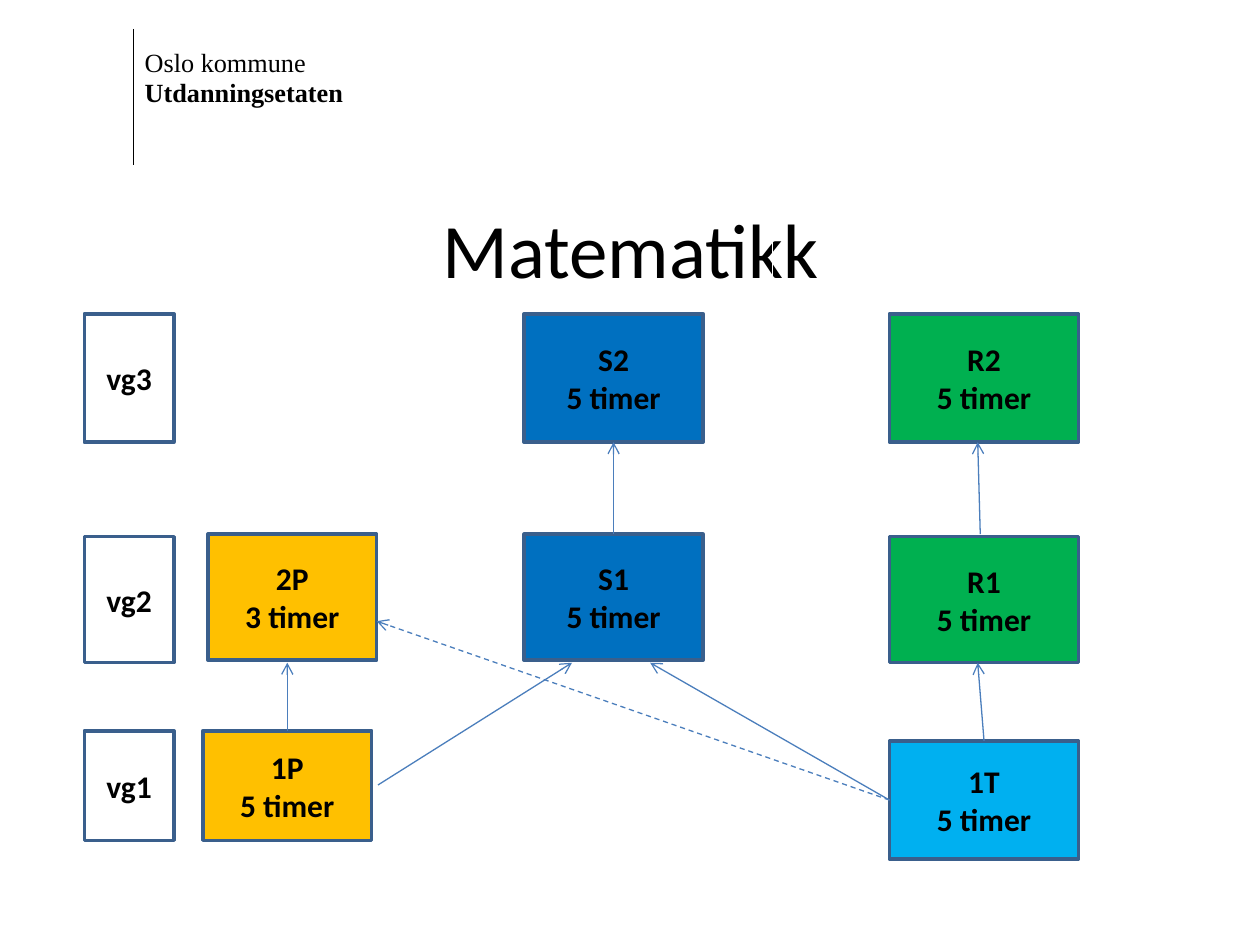
from lxml import etree
from pptx import Presentation
from pptx import util as u
from pptx.dml.color import RGBColor
from pptx.enum import dml, shapes, text
from pptx.oxml.ns import qn

BLACK = RGBColor(0, 0, 0)
EDGE = RGBColor(0x3A, 0x5F, 0x8C)
ARROW = RGBColor(0x4B, 0x7E, 0xBC)
GOLD = RGBColor(0xFF, 0xC0, 0x00)
SKY = RGBColor(0x00, 0xB0, 0xF0)
BLUE = RGBColor(0x00, 0x70, 0xC0)
GREEN = RGBColor(0x00, 0xB0, 0x50)


def style(par, name, size, bold=False):
    par.font.name, par.font.size, par.font.bold = name, u.Pt(size), bold
    par.font.color.rgb = BLACK


def join(start, end, color):
    line = slide.shapes.add_connector(
        shapes.MSO_CONNECTOR.STRAIGHT, *map(u.Inches, start + end))
    line.line.color.rgb, line.line.width = color, u.Pt(0.75)
    etree.SubElement(line._element.spPr, qn("a:effectLst"))
    return line


deck = Presentation()
deck.slide_width, deck.slide_height = u.Inches(10), u.Inches(7.5)
slide = deck.slides.add_slide(deck.slide_layouts[5])

# Title
title = slide.shapes.title
title.left, title.top, title.width, title.height = map(u.Inches, (0.83, 1.55, 8.35, 0.55))
frame = title.text_frame
frame.text = "Matematikk"
frame.auto_size = text.MSO_AUTO_SIZE.NONE
frame.vertical_anchor = text.MSO_ANCHOR.TOP
frame.paragraphs[0].alignment = text.PP_ALIGN.CENTER
style(frame.paragraphs[0], "Calibri", 44)

# Sender
join((1.06, 0.23), (1.06, 1.31), BLACK)
sender = slide.shapes.add_textbox(*map(u.Inches, (1.05, 0.36, 2.02, 0.78)))
frame = sender.text_frame
frame.word_wrap = False
frame.margin_top = u.Inches(0.02)
frame.text = "Oslo kommune\nUtdanningsetaten"
for par, bold in zip(frame.paragraphs, (False, True)):
    props = par._p.get_or_add_pPr()
    props.set("marL", str(u.Inches(0.5)))
    props.set("indent", str(-u.Inches(0.5)))
    par.line_spacing = u.Pt(17)
    style(par, "Times New Roman", 15, bold)

# Empty table with white borders
widths, heights = (0.26, 3, 3), (2.54, 2.87, 2.22)
table = slide.shapes.add_table(
    3, 3, *map(u.Inches, (2.87, -0.14, sum(widths), sum(heights)))).table
table.first_row = table.horz_banding = False
for col, width in zip(table.columns, widths):
    col.width = u.Inches(width)
for r, height in enumerate(heights):
    table.rows[r].height = u.Inches(height)
    for cell in table.rows[r].cells:
        props = cell._tc.get_or_add_tcPr()
        for side in "LRTB":
            thick = 3 if (r, side) in ((0, "B"), (1, "T")) else 1
            edge = etree.SubElement(props, qn("a:ln" + side), w=str(u.Pt(thick)))
            fill = etree.SubElement(edge, qn("a:solidFill"))
            etree.SubElement(fill, qn("a:srgbClr"), val="FFFFFF")
        cell.fill.background()

# Course boxes: columns are (left, width), rows are (top, height)
YEAR, P, S, T = (0.67, 0.71), (1.65, 1.34), (4.16, 1.42), (7.06, 1.5)
VG1, VG2, VG3 = (5.8, 0.87), (4.24, 1), (2.49, 1.02)
LOW = (4.26, 1)
courses = [
    ("1P", "5 timer", GOLD, (1.61, 1.34), VG1),
    ("1T", "5 timer", SKY, T, (5.88, 0.94)),
    ("2P", "3 timer", GOLD, P, VG2),
    ("S1", "5 timer", BLUE, S, VG2),
    ("R1", "5 timer", GREEN, T, LOW),
    ("S2", "5 timer", BLUE, S, VG3),
    ("R2", "5 timer", GREEN, T, VG3),
    ("vg1", None, None, YEAR, VG1),
    ("vg2", None, None, YEAR, LOW),
    ("vg3", None, None, YEAR, VG3),
]
boxes = {}
for name, hours, color, (left, width), (top, height) in courses:
    box = slide.shapes.add_shape(
        shapes.MSO_SHAPE.RECTANGLE, *map(u.Inches, (left, top, width, height)))
    box.shadow.inherit = False
    box.line.color.rgb, box.line.width = EDGE, u.Pt(2)
    if color is None:
        box.fill.background()
    else:
        box.fill.solid()
        box.fill.fore_color.rgb = color
    frame = box.text_frame
    frame.vertical_anchor = text.MSO_ANCHOR.MIDDLE
    frame.text = f"{name}\n{hours}" if hours else name
    for par in frame.paragraphs:
        par.alignment = text.PP_ALIGN.CENTER
        style(par, "Calibri", 18, True)
    boxes[name] = box

# Paths between courses: start, end, joined (box, side) at each end, dashed
paths = [
    ((3, 6.23), (4.54, 5.26), None, None, False),
    ((7.06, 6.35), (5.16, 5.26), ("1T", 1), None, False),
    ((2.28, 5.8), (2.28, 5.26), ("1P", 0), None, False),
    ((4.87, 4.24), (4.87, 3.51), ("S1", 0), ("S2", 2), False),
    ((7.81, 5.88), (7.76, 5.26), ("1T", 0), None, False),
    ((7.78, 4.24), (7.76, 3.51), None, None, False),
    ((7.06, 6.35), (2.99, 4.93), ("1T", 1), None, True),
]
for start, end, source, target, dashed in paths:
    arrow = join(start, end, ARROW)
    if source:
        arrow.begin_connect(boxes[source[0]], source[1])
    if target:
        arrow.end_connect(boxes[target[0]], target[1])
    if dashed:
        arrow.line.dash_style = dml.MSO_LINE.DASH
    etree.SubElement(arrow.line._get_or_add_ln(), qn("a:tailEnd"), type="arrow")

deck.save("out.pptx")
